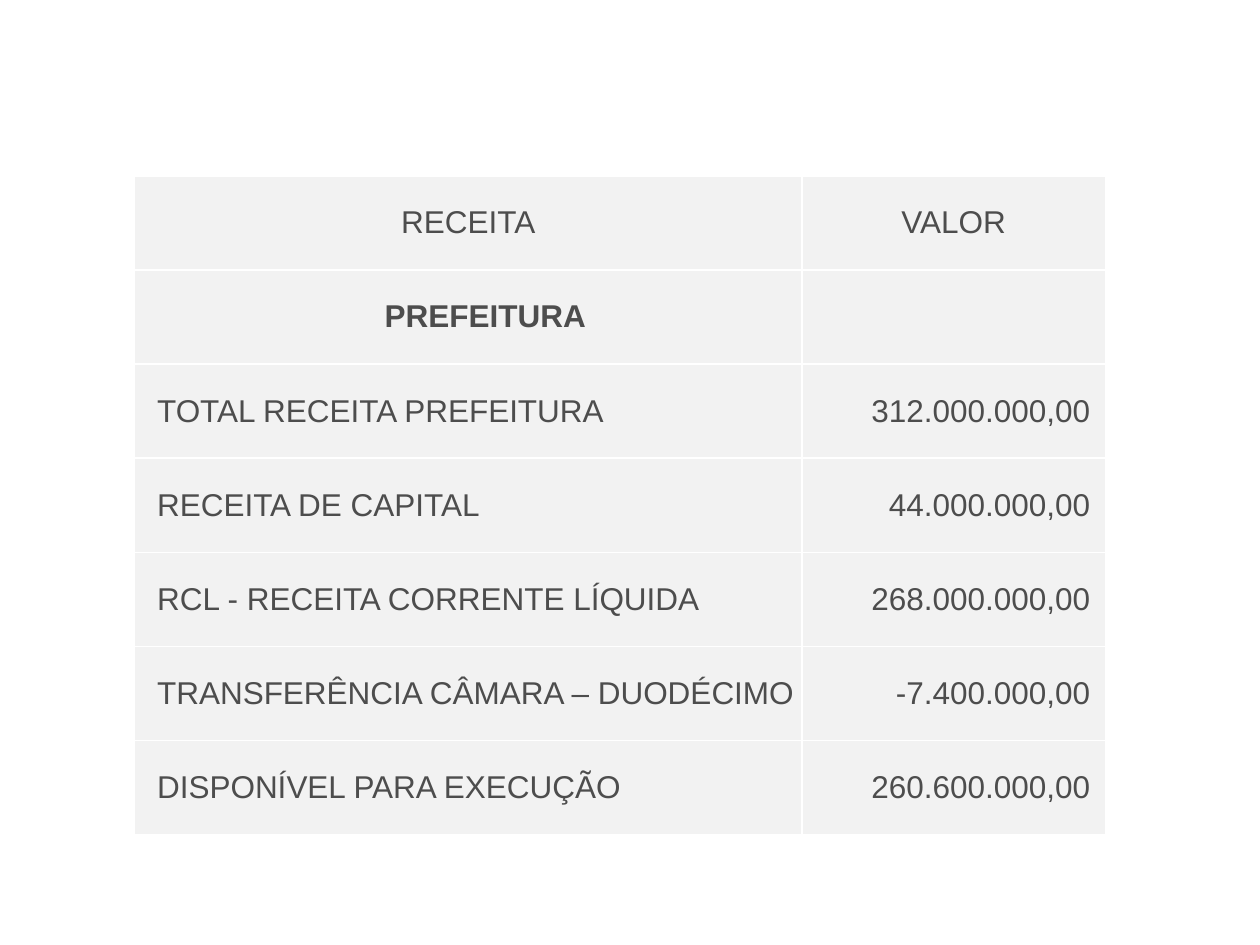
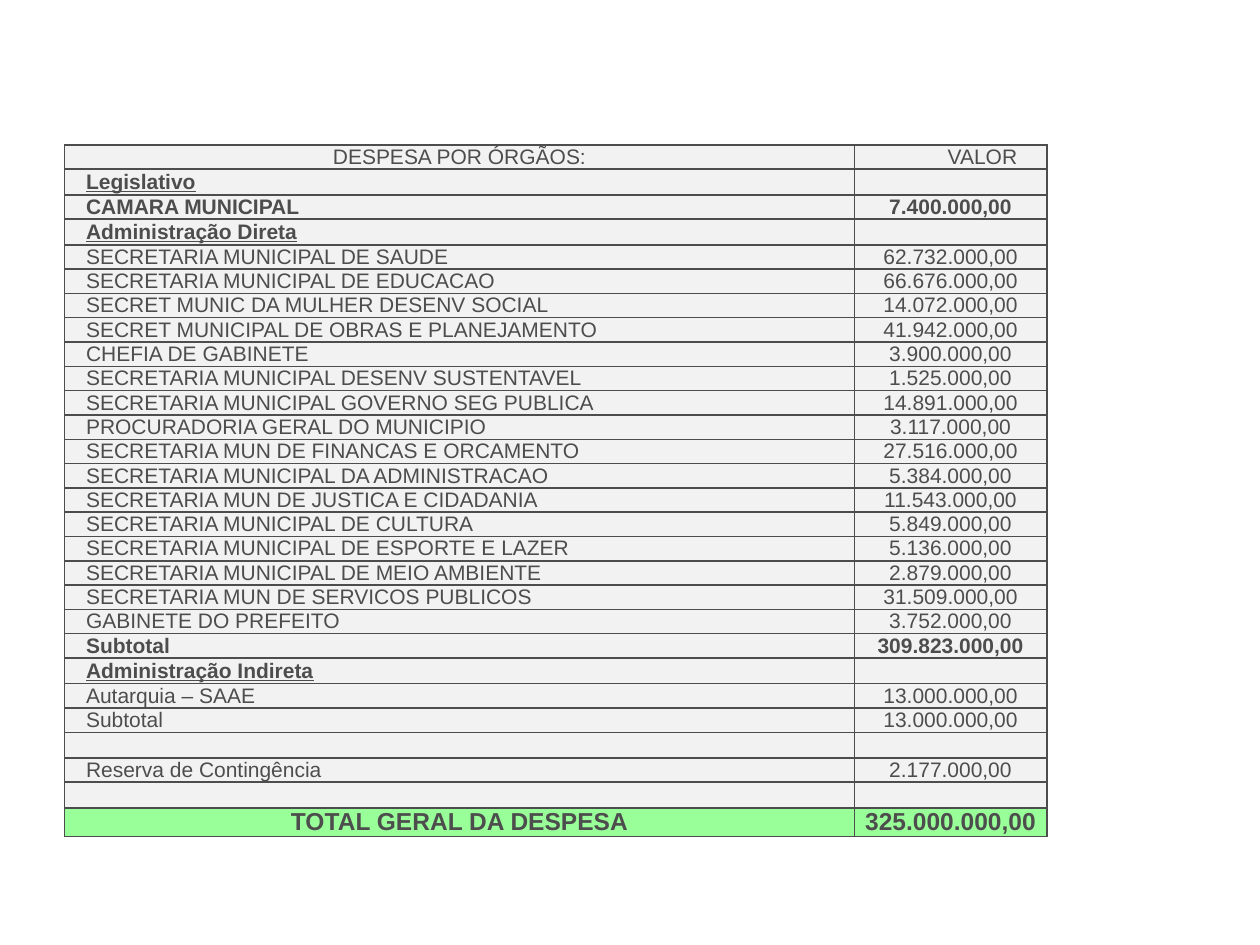
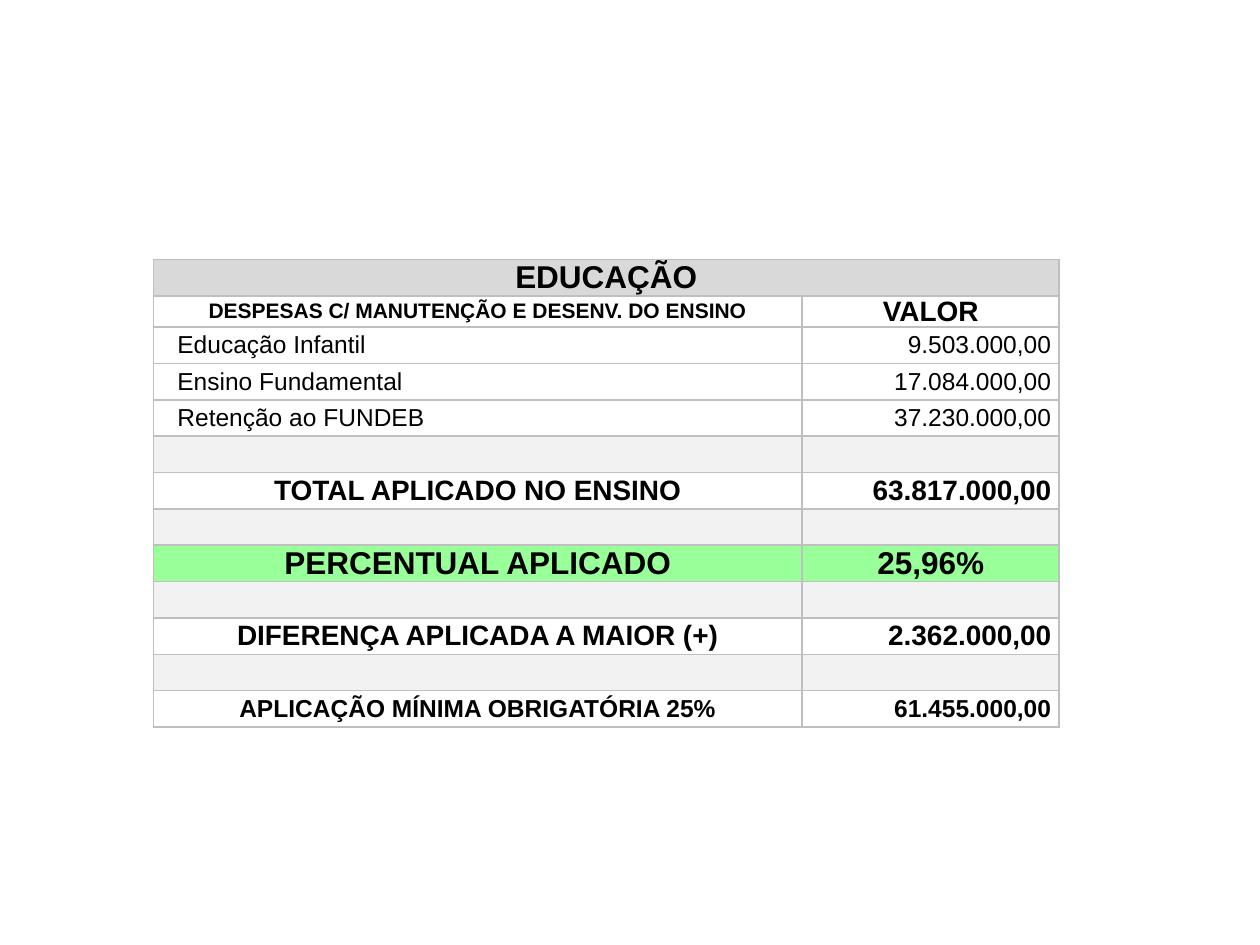
"""Build three slides of municipal budget tables."""
from lxml import etree
from pptx import Presentation
from pptx import util as u
from pptx.dml import color
from pptx.enum import text as t
from pptx.oxml import ns

COLORS = {"ink": "4D4D4D", "black": "000000", "white": "FFFFFF", "panel": "F2F2F2",
          "band": "D9D9D9", "total": "99FF99", "grid": "BFBFBF"}
CENTER, LEFT, RIGHT = t.PP_ALIGN.CENTER, t.PP_ALIGN.LEFT, t.PP_ALIGN.RIGHT

REVENUES = [
    ("TOTAL RECEITA PREFEITURA", "312.000.000,00"),
    ("RECEITA DE CAPITAL", "44.000.000,00"),
    ("RCL - RECEITA CORRENTE LÍQUIDA", "268.000.000,00"),
    ("TRANSFERÊNCIA CÂMARA – DUODÉCIMO", "-7.400.000,00"),
    ("DISPONÍVEL PARA EXECUÇÃO", "260.600.000,00"),
]

HEADING = {"bold": True, "underline": True}
STRONG = {"bold": True}
EXPENSES = [
    ("Legislativo", "", HEADING),
    ("CAMARA MUNICIPAL", "7.400.000,00", STRONG),
    ("Administração Direta", "", HEADING),
    ("SECRETARIA MUNICIPAL DE SAUDE", "62.732.000,00", {}),
    ("SECRETARIA MUNICIPAL DE EDUCACAO", "66.676.000,00", {}),
    ("SECRET MUNIC DA MULHER DESENV SOCIAL", "14.072.000,00", {}),
    ("SECRET MUNICIPAL DE OBRAS E PLANEJAMENTO", "41.942.000,00", {}),
    ("CHEFIA DE GABINETE", "3.900.000,00", {}),
    ("SECRETARIA MUNICIPAL DESENV SUSTENTAVEL", "1.525.000,00", {}),
    ("SECRETARIA MUNICIPAL GOVERNO SEG PUBLICA", "14.891.000,00", {}),
    ("PROCURADORIA GERAL DO MUNICIPIO", "3.117.000,00", {}),
    ("SECRETARIA MUN DE FINANCAS E ORCAMENTO", "27.516.000,00", {}),
    ("SECRETARIA MUNICIPAL DA ADMINISTRACAO", "5.384.000,00", {}),
    ("SECRETARIA MUN DE JUSTICA E CIDADANIA", "11.543.000,00", {}),
    ("SECRETARIA MUNICIPAL DE CULTURA", "5.849.000,00", {}),
    ("SECRETARIA MUNICIPAL DE ESPORTE E LAZER", "5.136.000,00", {}),
    ("SECRETARIA MUNICIPAL DE MEIO AMBIENTE", "2.879.000,00", {}),
    ("SECRETARIA MUN DE SERVICOS PUBLICOS", "31.509.000,00", {}),
    ("GABINETE DO PREFEITO", "3.752.000,00", {}),
    ("Subtotal", "309.823.000,00", STRONG),
    ("Administração Indireta", "", HEADING),
    ("Autarquia – SAAE", "13.000.000,00", {}),
    ("Subtotal", "13.000.000,00", {}),
    ("", "", {}),
    ("Reserva de Contingência", "2.177.000,00", {}),
    ("", "", {}),
]

SPACERS = 4
SCHOOL_ITEMS = [("Educação Infantil", "9.503.000,00"),
                ("Ensino Fundamental", "17.084.000,00"),
                ("Retenção ao FUNDEB", "37.230.000,00")]
SCHOOL_RESULTS = [
    ("TOTAL APLICADO NO ENSINO", "63.817.000,00", {"size": 16}, RIGHT),
    ("PERCENTUAL APLICADO", "25,96%", {"size": 18, "fill": "total"}, CENTER),
    ("DIFERENÇA APLICADA A MAIOR (+)", "2.362.000,00", {"size": 16}, RIGHT),
    ("APLICAÇÃO MÍNIMA OBRIGATÓRIA 25%", "61.455.000,00", {"size": 14, "fill": "white"}, RIGHT),
]


def write(cell, text, size=12, ink="ink", bold=False, underline=False,
          align=CENTER, left=0.5, right=0.5):
    """Put formatted text in a cell."""
    cell.vertical_anchor = t.MSO_ANCHOR.MIDDLE
    cell.margin_left, cell.margin_right = u.Pt(left), u.Pt(right)
    cell.margin_top = cell.margin_bottom = u.Pt(0)
    para = cell.text_frame.paragraphs[0]
    para.alignment = align
    if not text:
        end = etree.SubElement(para._p, ns.qn("a:endParaRPr"))
        end.set("sz", str(size * 100))
        return
    span = para.add_run()
    span.text = text
    span.font.name, span.font.size = "Arial", u.Pt(size)
    span.font.bold, span.font.underline = bold, underline
    span.font.color.rgb = color.RGBColor.from_string(COLORS[ink])


class Budget:
    """Hold the deck, the current slide and its table."""

    def __init__(self):
        """Start an empty deck."""
        self.deck = Presentation()
        self.deck.slide_width, self.deck.slide_height = u.Pt(720), u.Pt(540)

    def page(self):
        """Add a blank slide."""
        self.slide = self.deck.slides.add_slide(self.deck.slide_layouts[6])

    def table(self, left, top, widths, heights, border):
        """Add a plain table with the given columns and rows."""
        frame = self.slide.shapes.add_table(
            len(heights), len(widths), u.Pt(left), u.Pt(top),
            u.Pt(sum(widths)), u.Pt(sum(heights)))
        self.grid, self.border = frame.table, border
        self.grid.first_row = self.grid.horz_banding = False
        for column, width in zip(self.grid.columns, widths):
            column.width = u.Pt(width)
        for row, height in zip(self.grid.rows, heights):
            row.height = u.Pt(height)

    def edges(self, cell, sides):
        """Draw the named sides of a cell and clear the others."""
        for side in "LRTB":
            line = etree.SubElement(cell._tc.get_or_add_tcPr(), ns.qn("a:ln" + side), w="12700")
            if side in sides:
                paint = etree.SubElement(line, ns.qn("a:solidFill"))
                etree.SubElement(paint, ns.qn("a:srgbClr"), val=COLORS[self.border])
            else:
                etree.SubElement(line, ns.qn("a:noFill"))

    def cell(self, row, column, text="", fill=None, sides="LRTB", **style):
        """Fill one cell with its borders, colour and text."""
        cell = self.grid.cell(row, column)
        self.edges(cell, sides)
        if fill:
            cell.fill.solid()
            cell.fill.fore_color.rgb = color.RGBColor.from_string(COLORS[fill])
        else:
            cell.fill.background()
        write(cell, text, **style)

    def row(self, index, label, value, label_style=None, value_style=None, **style):
        """Fill a label and value row."""
        self.cell(index, 0, label, **{**style, **(label_style or {})})
        self.cell(index, 1, value, **{**style, **(value_style or {})})

    def merge(self, index):
        """Join the two cells of a row."""
        self.grid.cell(index, 0).merge(self.grid.cell(index, 1))


def revenue(budget):
    """Build the revenue slide."""
    budget.page()
    budget.table(76.8, 100.5, [381.6, 173.2], [53.8] * (len(REVENUES) + 2), "white")
    style = {"fill": "panel", "size": 18}
    budget.row(0, "RECEITA", "VALOR", **style)
    budget.row(1, "PREFEITURA", "", {"left": 20, "bold": True}, **style)
    for index, (label, value) in enumerate(REVENUES, 2):
        budget.row(index, label, value, {"align": LEFT, "left": 13},
                   {"align": RIGHT, "right": 8.6}, **style)


def expense(budget):
    """Build the slide of expenses by department."""
    budget.page()
    last = len(EXPENSES) + 1
    budget.table(37, 82.8, [451.2, 110], [13.9] * last + [16.3], "ink")
    budget.row(0, "DESPESA POR ÓRGÃOS:", "VALOR", value_style={"left": 37}, fill="panel")
    for index, (label, value, style) in enumerate(EXPENSES, 1):
        budget.row(index, label, value, {"align": LEFT, "left": 12.2, **style},
                   {"bold": style.get("bold", False)}, fill="panel")
    budget.row(last, "TOTAL GERAL DA DESPESA", "325.000.000,00",
               fill="total", size=14, bold=True)


def education(budget):
    """Build the education slide."""
    budget.page()
    heights = [17.85] * SPACERS + [20.8, 17.8] + [20.8] * 11
    budget.table(87.6, 77, [370.8, 146.9], heights, "grid")
    for index in range(SPACERS):
        budget.row(index, "", "", sides="B" if index == SPACERS - 1 else "")
    style = {"ink": "black", "left": 0, "right": 0}
    amount = {"align": RIGHT, "right": 4.6}
    budget.row(SPACERS, "EDUCAÇÃO", "", fill="band", size=18, bold=True, **style)
    budget.merge(0)
    budget.merge(SPACERS)
    budget.row(SPACERS + 1, "DESPESAS C/ MANUTENÇÃO E DESENV. DO ENSINO", "VALOR",
               {"size": 12}, {"size": 16}, bold=True, **style)
    first = SPACERS + 2
    for index, (label, value) in enumerate(SCHOOL_ITEMS, first):
        budget.row(index, label, value, {"align": LEFT, "left": 13.8}, amount, size=14, **style)
    first += len(SCHOOL_ITEMS)
    for step, (label, value, look, align) in enumerate(SCHOOL_RESULTS):
        budget.row(first + 2 * step, "", "", fill="panel")
        budget.row(first + 2 * step + 1, label, value,
                   value_style=amount if align == RIGHT else None,
                   bold=True, **style, **look)


def main():
    """Build and save the deck."""
    budget = Budget()
    for build in (revenue, expense, education):
        build(budget)
    budget.deck.save("out.pptx")


if __name__ == "__main__":
    main()
